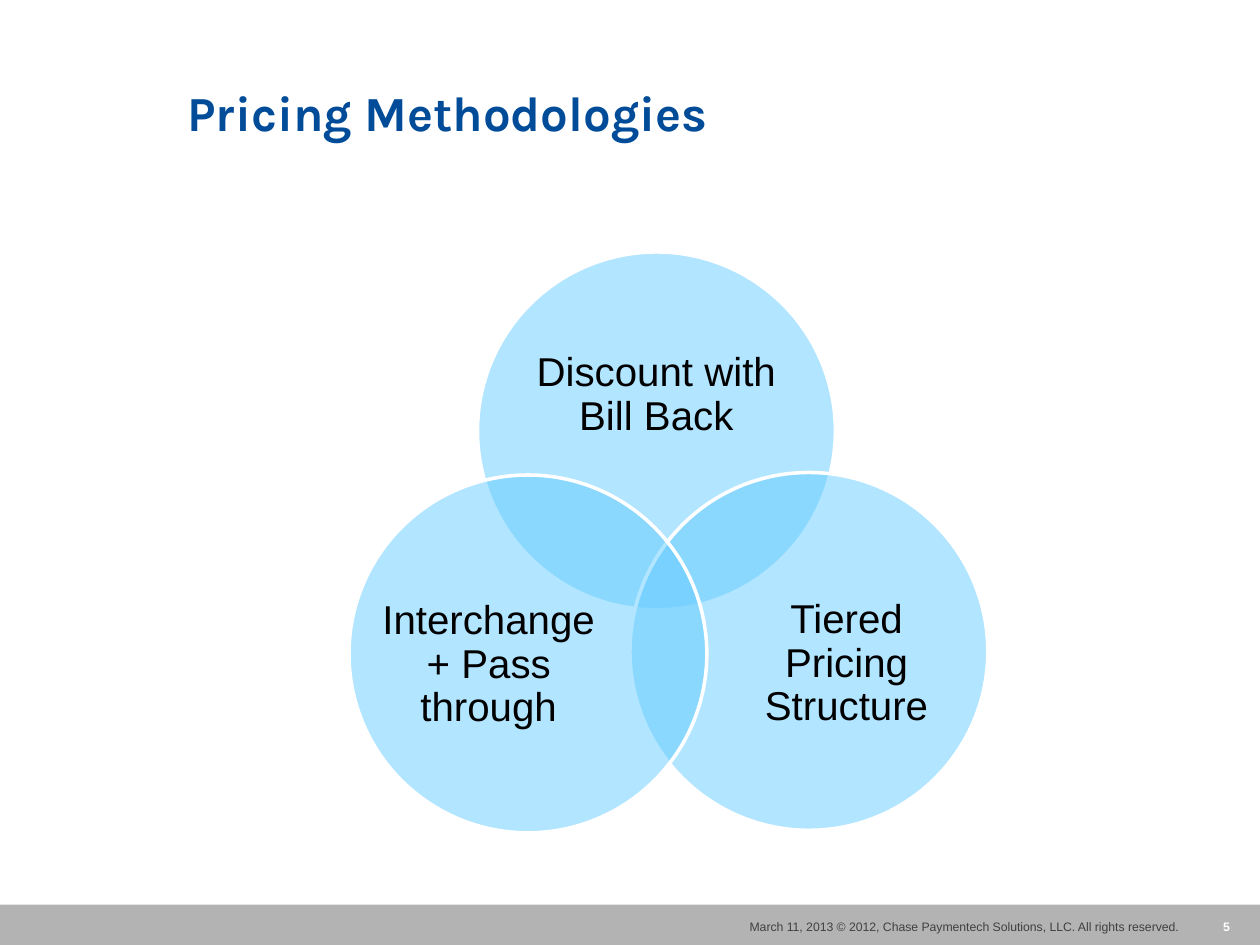
from lxml import etree
from pptx import Presentation
from pptx import util as u
from pptx.dml.color import RGBColor
from pptx.enum import shapes, text
from pptx.oxml.ns import qn

COLORS = {
    "title": "004C99",
    "circle": "66CCFF",
    "bar": "B3B3B3",
    "footer": "404040",
    "white": "FFFFFF",
    "black": "000000",
}
ALIGN = text.PP_ALIGN
ANCHOR = text.MSO_ANCHOR
DIAMETER = 2.84


def color(name):
    return RGBColor.from_string(COLORS[name])


def write_text(shape, words, *, size, fill, font="Arial", bold=False,
               align=ALIGN.LEFT, line_spacing=None):
    paragraph = shape.text_frame.paragraphs[0]
    paragraph.text = words
    paragraph.alignment = align
    if line_spacing:
        paragraph.line_spacing = line_spacing
    paragraph.font.name = font
    paragraph.font.size = u.Pt(size)
    paragraph.font.bold = bold
    paragraph.font.color.rgb = color(fill)


class SlideBuilder:
    """Holds the slide and draws its elements in the shared style."""

    def __init__(self, presentation):
        self.slide = presentation.slides.add_slide(presentation.slide_layouts[6])

    def shape(self, kind, left, top, width, height, fill):
        shape = self.slide.shapes.add_shape(
            kind, *map(u.Inches, (left, top, width, height)))
        shape.shadow.inherit = False
        shape.fill.solid()
        shape.fill.fore_color.rgb = color(fill)
        shape.line.fill.background()
        return shape

    def bar(self, left, top, width, height):
        self.shape(shapes.MSO_SHAPE.RECTANGLE, left, top, width, height, "bar")

    def circle(self, left, top):
        """Draw a half-transparent circle with a white outline."""
        circle = self.shape(shapes.MSO_SHAPE.OVAL, left, top,
                            DIAMETER, DIAMETER, "circle")
        circle.line.color.rgb = color("white")
        circle.line.width = u.Pt(2)
        fill_color = circle.fill._xPr.find(qn("a:solidFill"))[0]
        etree.SubElement(fill_color, qn("a:alpha"), val="50000")

    def text_box(self, words, left, top, width, height, *,
                 anchor=ANCHOR.TOP, inset=True, **style):
        box = self.slide.shapes.add_textbox(
            *map(u.Inches, (left, top, width, height)))
        frame = box.text_frame
        frame.word_wrap = True
        frame.vertical_anchor = anchor
        if not inset:
            frame.margin_left = frame.margin_right = 0
            frame.margin_top = frame.margin_bottom = 0
        write_text(box, words, **style)


def main():
    presentation = Presentation()
    presentation.slide_width = u.Inches(10)
    presentation.slide_height = u.Inches(7.5)
    builder = SlideBuilder(presentation)

    builder.bar(0, 7.18, 10, 0.32)
    builder.text_box(
        "March 11, 2013 © 2012, Chase Paymentech Solutions, LLC. "
        "All rights reserved. ",
        1.89, 7.25, 7.59, 0.5, size=7, fill="footer", align=ALIGN.RIGHT)
    builder.text_box("5", 9.48, 7.25, 0.51, 0.22, size=7, fill="white",
                     bold=True, align=ALIGN.CENTER)
    builder.text_box("Pricing Methodologies", 1.39, 0.5, 7.63, 0.67,
                     anchor=ANCHOR.BOTTOM, size=28, fill="title",
                     font="Karla", bold=True)

    venn = [
        ("Discount with Bill Back", (3.79, 2), (4.17, 2.5, 2.08, 1.28)),
        ("Tiered Pricing Structure", (5, 3.75), (5.87, 4.49, 1.7, 1.56)),
        ("Interchange + Pass through", (2.77, 3.77), (3.03, 4.5, 1.7, 1.56)),
    ]
    for label, circle_corner, label_area in venn:
        builder.circle(*circle_corner)
        builder.text_box(label, *label_area, anchor=ANCHOR.MIDDLE, inset=False,
                         size=23, fill="black", align=ALIGN.CENTER,
                         line_spacing=0.9)

    presentation.save("out.pptx")


if __name__ == "__main__":
    main()
